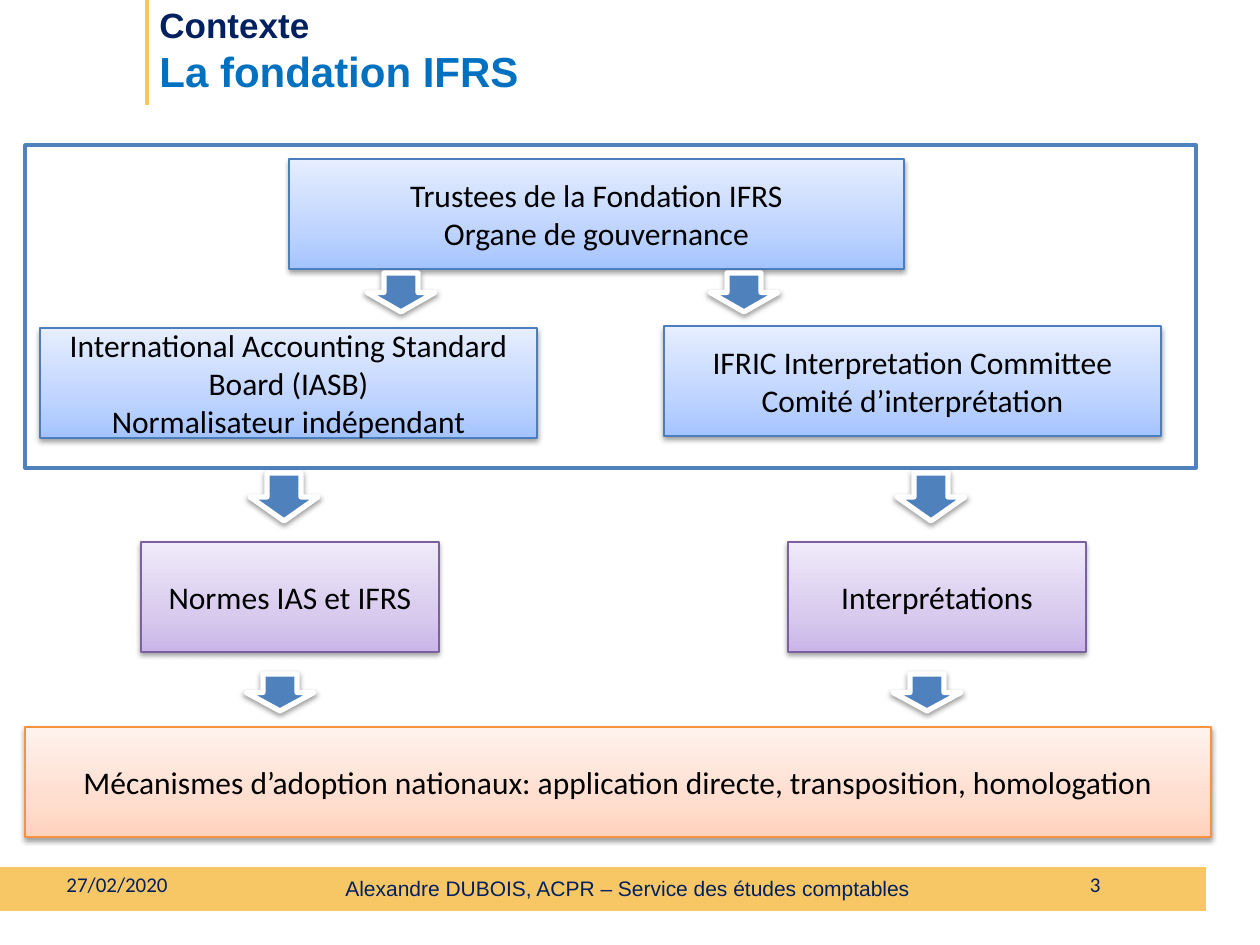
from dataclasses import dataclass
from typing import NamedTuple

import pptx
import pptx.dml.color
import pptx.enum.shapes
import pptx.enum.text
import pptx.oxml
import pptx.oxml.ns
import pptx.util
from lxml import etree

Kind = pptx.enum.shapes.MSO_SHAPE
Align = pptx.enum.text.PP_ALIGN
Anchor = pptx.enum.text.MSO_ANCHOR
qn = pptx.oxml.ns.qn
UNIT = 914400 / 126  # EMU in one px


class Tone(NamedTuple):
    base: str
    mid: str
    top: str
    edge: str


@dataclass(frozen=True)
class Theme:
    navy: str = "002060"
    sky: str = "0070C0"
    gold: str = "F7C765"
    steel: str = "4F81BD"
    white: str = "FFFFFF"
    black: str = "000000"
    blue: Tone = Tone("A4C4FF", "BFD4FF", "E6EEFF", "4B7EBC")
    mauve: Tone = Tone("C9B5E8", "D8CBEE", "F0EAF9", "7D60A0")
    peach: Tone = Tone("FFD2BD", "FFDED0", "FFF2ED", "F69240")
    head: str = "Arial"
    body: str = "Calibri"
    small: int = 12
    text: int = 18
    topic: int = 20
    title: int = 24


class Area(NamedTuple):
    left: int
    top: int
    width: int
    height: int


class Box(NamedTuple):
    area: Area
    text: str
    tone: Tone


class Label(NamedTuple):
    area: Area
    text: str
    font: str
    align: Align
    anchor: Anchor


THEME = Theme()
SHIFT = 647  # from the left branch to the right one
TALL = 110   # height of every box

BOXES = [
    Box(Area(289, 159, 615, TALL),
        "Trustees de la Fondation IFRS\nOrgane de gouvernance", THEME.blue),
    Box(Area(40, 328, 497, TALL),
        "International Accounting Standard Board (IASB)\nNormalisateur indépendant",
        THEME.blue),
    Box(Area(664, 326, 497, TALL),
        "IFRIC Interpretation Committee\nComité d’interprétation", THEME.blue),
    Box(Area(141, 542, 298, TALL), "Normes IAS et IFRS", THEME.mauve),
    Box(Area(141 + SHIFT, 542, 298, TALL), "Interprétations", THEME.mauve),
    Box(Area(25, 727, 1186, TALL),
        "Mécanismes d’adoption nationaux: application directe, transposition, homologation",
        THEME.peach),
]

# Each row of arrows: left, top, height, gap to the second arrow
ROWS = [(367, 273, 39, 343), (250, 473, 48, SHIFT), (246, 674, 37, SHIFT)]
ARROWS = [Area(left + i * gap, top, 68, high)
          for left, top, high, gap in ROWS for i in range(2)]

LABELS = [
    Label(Area(333, 869, 595, 69),
          "Alexandre DUBOIS, ACPR – Service des études comptables",
          THEME.head, Align.LEFT, Anchor.TOP),
    Label(Area(819, 859, 294, 50), "3", THEME.body, Align.RIGHT, Anchor.MIDDLE),
    Label(Area(54, 859, 294, 50), "27/02/2020", THEME.body, Align.LEFT, Anchor.MIDDLE),
]


def emu(*px: int) -> list[int]:
    return [round(n * UNIT) for n in px]


def paint(code: str) -> pptx.dml.color.RGBColor:
    return pptx.dml.color.RGBColor.from_string(code)


def style(run, font: str, size: int, code: str, bold: bool = False) -> None:
    run.font.name = font
    run.font.size = pptx.util.Pt(size)
    run.font.bold = bold
    run.font.color.rgb = paint(code)


def tint(node, code: str):
    return etree.SubElement(node, qn("a:srgbClr"), val=code)


def add_shape(slide, kind: Kind, area: Area):
    shape = slide.shapes.add_shape(kind, *emu(*area))
    shape.shadow.inherit = False
    return shape


def edge(shape, code: str, width: float) -> None:
    shape.line.color.rgb = paint(code)
    shape.line.width = pptx.util.Pt(width)


def shade(shape) -> None:
    """Give the shape a soft shadow straight below it."""
    effects = shape.element.spPr.find(qn("a:effectLst"))
    drop = etree.SubElement(effects, qn("a:outerShdw"), blurRad="39370", dist="20320",
                            dir="5400000", rotWithShape="0")
    etree.SubElement(tint(drop, THEME.black), qn("a:alpha"), val="38000")


def blend(shape, tone: Tone) -> None:
    """Fill from the base colour at the bottom to the light one at the top."""
    shape.fill.gradient()
    shape.fill.gradient_angle = 90
    stops = shape.element.spPr.find(qn("a:gradFill")).find(qn("a:gsLst"))
    for stop in list(stops):
        stops.remove(stop)
    for place, code in zip((0, 35, 100), tone[:3]):
        tint(etree.SubElement(stops, qn("a:gs"), pos=str(place * 1000)), code)


def add_box(slide, box: Box) -> None:
    shape = add_shape(slide, Kind.RECTANGLE, box.area)
    blend(shape, box.tone)
    edge(shape, box.tone.edge, 0.75)
    shade(shape)
    frame = shape.text_frame
    frame.word_wrap = True
    frame.vertical_anchor = Anchor.MIDDLE
    frame.text = box.text
    for para in frame.paragraphs:
        para.alignment = Align.CENTER
        style(para.runs[0], THEME.body, THEME.text, THEME.black)


def add_arrow(slide, area: Area) -> None:
    shape = add_shape(slide, Kind.DOWN_ARROW, area)
    shape.fill.solid()
    shape.fill.fore_color.rgb = paint(THEME.steel)
    edge(shape, THEME.white, 3)
    shade(shape)


def add_text(slide, area: Area, text: str, align: Align, anchor: Anchor):
    frame = slide.shapes.add_textbox(*emu(*area)).text_frame
    frame.word_wrap = True
    frame.vertical_anchor = anchor
    para = frame.paragraphs[0]
    para.text = text
    para.alignment = align
    return para.runs


def add_label(slide, label: Label) -> None:
    runs = add_text(slide, label.area, label.text, label.align, label.anchor)
    style(runs[0], label.font, THEME.small, THEME.navy)


def main() -> None:
    deck = pptx.Presentation()
    deck.slide_width, deck.slide_height = emu(1260, 945)
    slide = deck.slides.add_slide(deck.slide_layouts[6])

    # Footer band
    band = add_shape(slide, Kind.RECTANGLE, Area(0, 867, 1206, 44))
    band.fill.solid()
    band.fill.fore_color.rgb = paint(THEME.gold)
    band.line.fill.background()
    for label in LABELS:
        add_label(slide, label)

    # Title and its rule
    rule = slide.shapes.add_connector(
        pptx.enum.shapes.MSO_CONNECTOR.STRAIGHT, *emu(147, 0, 147, 105))
    edge(rule, THEME.gold, 2.75)
    etree.SubElement(rule.element.spPr, qn("a:effectLst"))
    topic, title = add_text(slide, Area(147, -4, 912, 108),
                            "Contexte \vLa fondation IFRS", Align.LEFT, Anchor.MIDDLE)
    style(topic, THEME.head, THEME.topic, THEME.navy, True)
    style(title, THEME.head, THEME.title, THEME.sky, True)

    # Diagram
    frame = add_shape(slide, Kind.RECTANGLE, Area(25, 145, 1171, 323))
    frame.fill.background()
    edge(frame, THEME.steel, 2)
    for box in BOXES:
        add_box(slide, box)
    for arrow in ARROWS:
        add_arrow(slide, arrow)

    deck.save("out.pptx")


if __name__ == "__main__":
    main()
